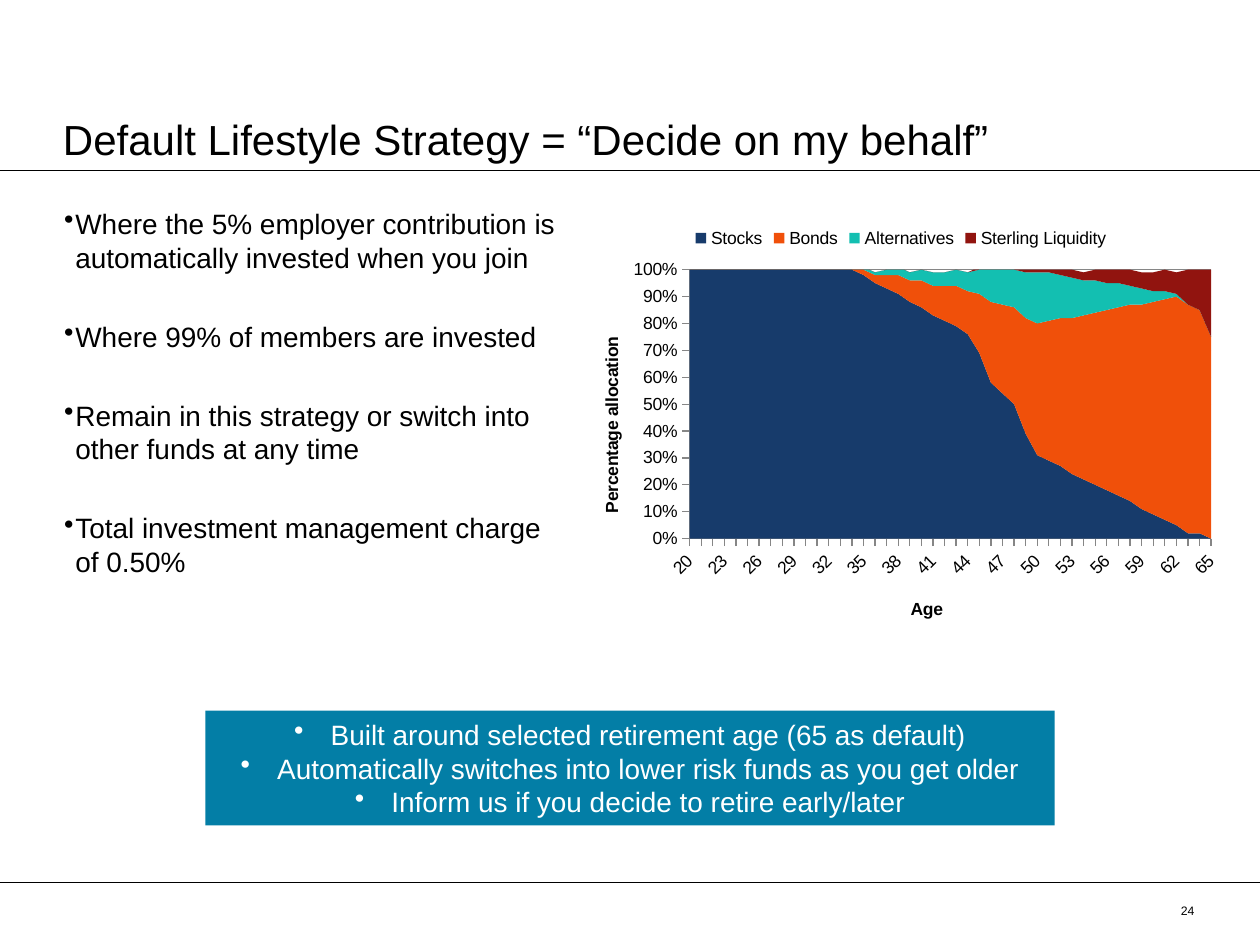
from lxml import etree
from pptx import Presentation
from pptx.chart.data import CategoryChartData
from pptx.dml.color import RGBColor
from pptx.enum.chart import XL_CHART_TYPE, XL_LEGEND_POSITION, XL_TICK_MARK
from pptx.enum.shapes import MSO_CONNECTOR, MSO_SHAPE
from pptx.enum.text import MSO_ANCHOR, PP_ALIGN
from pptx.oxml.ns import qn
from pptx.util import Inches, Pt

FONT = "Arial"
COLORS = {"text": "000000", "box": "037EA6", "box text": "FFFFFF", "grid": "868686",
          "Stocks": "173B6B", "Bonds": "F0500A",
          "Alternatives": "13BFB1", "Sterling Liquidity": "91140F"}
W, H = 10, 7.5
RULES = (1.35, 7)

TITLE = "Default Lifestyle Strategy = “Decide on my behalf”"
POINTS = [
    "Where the 5% employer contribution is automatically invested when you join",
    "Where 99% of members are invested",
    "Remain in this strategy or switch into other funds at any time",
    "Total investment management charge of 0.50%",
]
BOX_POINTS = [
    "Built around selected retirement age (65 as default)",
    "Automatically switches into lower risk funds as you get older",
    "Inform us if you decide to retire early/later",
]
PAGE = "24"

AGES = range(20, 66)
# Percentages from age 35 on; before that everything is in stocks
STEADY_YEARS = 15
ALLOCATION = {
    "Stocks": [98, 95, 93, 91, 88, 86, 83, 81, 79, 76, 69, 58, 54, 50, 39, 31,
               29, 27, 24, 22, 20, 18, 16, 14, 11, 9, 7, 5, 2, 2, 0],
    "Bonds": [2, 3, 5, 7, 8, 10, 11, 13, 15, 16, 22, 30, 33, 36, 43, 49,
              52, 55, 58, 61, 64, 67, 70, 73, 76, 79, 82, 85, 85, 83, 75],
    "Alternatives": [1, 1, 2, 3, 3, 4, 5, 5, 6, 7, 9, 12, 13, 14, 17, 19,
                     18, 16, 15, 13, 12, 10, 9, 7, 6, 4, 3, 1, 0, 0, 0],
    "Sterling Liquidity": [0, 0, 0, 0, 0, 0, 0, 0, 0, 0, 1, 1, 1, 1, 1, 1,
                           2, 2, 3, 3, 4, 5, 5, 6, 6, 7, 8, 8, 13, 15, 25],
}


def rgb(name):
    return RGBColor.from_string(COLORS[name])


def style(font, size, color="text", bold=False):
    font.name, font.size, font.bold = FONT, Pt(size), bold
    font.color.rgb = rgb(color)


def write(tf, lines, size, color="text", align=PP_ALIGN.LEFT, bullet_indent=0, gap=0):
    """Fill a text frame with one paragraph per line, bulleted when indented."""
    tf.word_wrap = True
    for i, line in enumerate(lines):
        p = tf.paragraphs[0] if i == 0 else tf.add_paragraph()
        p.text, p.alignment = line, align
        style(p.font, size, color)
        if i:
            p.space_before = Pt(gap)
        if bullet_indent:
            pPr = p._p.get_or_add_pPr()
            pPr.set("marL", str(Inches(bullet_indent)))
            pPr.set("indent", str(-Inches(bullet_indent)))
            bullet = etree.Element(qn("a:buChar"), char="•")
            pPr.insert_element_before(bullet, "a:tabLst", "a:defRPr", "a:extLst")


def add_text(slide, at, lines, size, margins=None, anchor=MSO_ANCHOR.TOP, **options):
    tf = slide.shapes.add_textbox(*map(Inches, at)).text_frame
    if margins:
        tf.margin_left, tf.margin_top, tf.margin_right, tf.margin_bottom = map(Inches, margins)
    tf.vertical_anchor = anchor
    write(tf, lines, size, **options)


def add_rule(slide, y):
    line = slide.shapes.add_connector(MSO_CONNECTOR.STRAIGHT, 0, Inches(y), Inches(W), Inches(y))
    line.line.color.rgb = rgb("text")
    line.line.width = Pt(0.25)
    etree.SubElement(line._element.spPr, qn("a:effectLst"))


def place(element, index, **shares):
    """Give a chart part a fixed place, as shares of the chart's size."""
    for old in element.findall(qn("c:layout")):
        element.remove(old)
    layout = etree.Element(qn("c:layout"))
    manual = etree.SubElement(layout, qn("c:manualLayout"))
    if "w" in shares:
        etree.SubElement(manual, qn("c:layoutTarget"), val="inner")
    for side in ("x", "y"):
        etree.SubElement(manual, qn(f"c:{side}Mode"), val="edge")
    for key, share in shares.items():
        etree.SubElement(manual, qn(f"c:{key}"), val=str(share))
    element.insert(index, layout)


def title_axis(axis, text, x, y):
    tf = axis.axis_title.text_frame
    tf.text = text
    style(tf.paragraphs[0].runs[0].font, 10, bold=True)
    place(axis.axis_title._element, 1, x=x, y=y)


def add_allocation_chart(slide, at):
    data = CategoryChartData(number_format="0%")
    data.categories = [str(age) for age in AGES]
    for name, percents in ALLOCATION.items():
        start = 1 if name == "Stocks" else 0
        data.add_series(name, [start] * STEADY_YEARS + [v / 100 for v in percents])
    chart = slide.shapes.add_chart(XL_CHART_TYPE.AREA_STACKED, *map(Inches, at), data).chart
    style(chart.font, 10)
    chart.has_title = False
    chart.has_legend = True
    chart.legend.position = XL_LEGEND_POSITION.TOP
    chart.legend.include_in_layout = False
    for series in chart.plots[0].series:
        series.format.fill.solid()
        series.format.fill.fore_color.rgb = rgb(series.name)
        series.format.line.fill.background()

    ages, shares = chart.category_axis, chart.value_axis
    for axis in (ages, shares):
        axis.major_tick_mark = XL_TICK_MARK.OUTSIDE
        axis.minor_tick_mark = XL_TICK_MARK.NONE
        axis.format.line.color.rgb = rgb("grid")
        style(axis.tick_labels.font, 10)
    ages.has_major_gridlines = False
    shares.has_major_gridlines = True
    shares.major_gridlines.format.line.color.rgb = rgb("grid")
    shares.minimum_scale, shares.maximum_scale, shares.major_unit = 0, 1, 0.1
    shares.tick_labels.number_format = "0%"
    shares.tick_labels.number_format_is_linked = False
    title_axis(ages, "Age", 0.51, 0.89)
    title_axis(shares, "Percentage allocation", 0.04, 0.28)

    cat_ax, val_ax = ages._element, shares._element
    cat_ax.find(qn("c:txPr")).find(qn("a:bodyPr")).set("rot", str(-45 * 60000))
    last = cat_ax.find(qn("c:noMultiLvlLbl"))
    for tag, step in (("c:tickLblSkip", "3"), ("c:tickMarkSkip", "1")):
        last.addprevious(etree.Element(qn(tag), val=step))
    val_ax.find(qn("c:crossBetween")).set("val", "midCat")
    place(cat_ax.getparent(), 0, x=0.18, y=0.13, w=0.79, h=0.63)


def add_box(slide, at):
    sp = slide.shapes.add_shape(MSO_SHAPE.RECTANGLE, *map(Inches, at))
    sp.shadow.inherit = False
    sp.fill.solid()
    sp.fill.fore_color.rgb = rgb("box")
    sp.line.fill.background()
    write(sp.text_frame, BOX_POINTS, 16, "box text", PP_ALIGN.CENTER, bullet_indent=0.29)


def main():
    prs = Presentation()
    prs.slide_width, prs.slide_height = Inches(W), Inches(H)
    slide = prs.slides.add_slide(prs.slide_layouts[6])
    for y in RULES:
        add_rule(slide, y)
    add_text(slide, (9.08, 7.17, 0.4, 0.3), [PAGE], 7, (0, 0, 0, 0), align=PP_ALIGN.RIGHT)
    add_text(slide, (0.5, 0.5, 9, 0.85), [TITLE], 24, (0, 0, 0, 0.05), MSO_ANCHOR.BOTTOM)
    add_box(slide, (1.63, 5.64, 6.74, 0.91))
    add_text(slide, (0.41, 1.59, 4.19, 3.34), POINTS, 16, bullet_indent=0.09, gap=26)
    add_allocation_chart(slide, (4.53, 1.7, 5.24, 3.39))
    prs.save("out.pptx")


if __name__ == "__main__":
    main()
